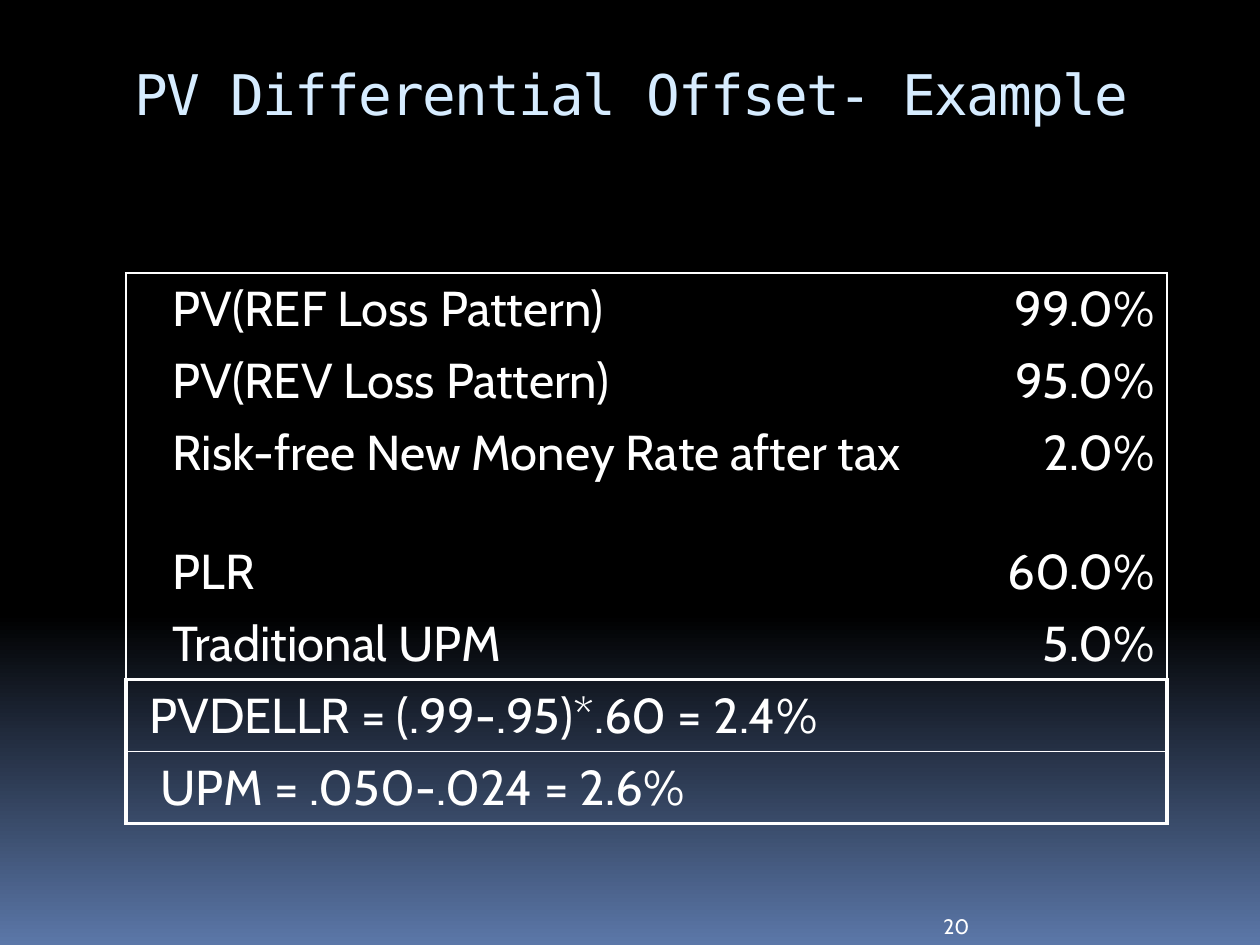
from copy import deepcopy
from dataclasses import dataclass

from lxml.etree import SubElement
from pptx import Presentation
from pptx.dml.color import RGBColor
from pptx.enum.text import MSO_ANCHOR, PP_ALIGN
from pptx.oxml.ns import qn
from pptx.util import Cm, Pt


@dataclass(frozen=True)
class Theme:
    white: str = "FFFFFF"
    title_color: str = "D6ECFF"
    gradient: tuple = ((0, "000000"), (0.65, "000000"), (1, "5B77A8"))
    title_font: str = "DejaVu Sans Mono"
    body_font: str = "Cabin"
    title_size: int = 32
    body_size: int = 28
    number_size: int = 12
    thin: float = 1
    medium: float = 1.5
    thick: float = 2.25


THEME = Theme()
HANGING = 0.97  # cm


def write(frame, text, font=THEME.body_font, size=THEME.body_size,
          color=THEME.white, align=PP_ALIGN.LEFT, tracking=None,
          hanging=None, lead=0):
    """Put one formatted paragraph in a text frame."""
    para = frame.paragraphs[0]
    para.alignment = align
    if hanging is not None:
        properties = para._p.get_or_add_pPr()
        properties.set("marL", str(Cm(hanging)))
        properties.set("indent", str(Cm(lead - hanging)))
    span = para.add_run()
    span.text = text
    span.font.name = font
    span.font.size = Pt(size)
    span.font.color.rgb = RGBColor.from_string(color)
    if tracking is not None:
        span.font._element.set("spc", str(tracking * 100))


class SlideBuilder:
    def __init__(self, deck, theme):
        self.theme = theme
        self.slide = deck.slides.add_slide(deck.slide_layouts[6])

    def background(self):
        fill = self.slide.background.fill
        fill.gradient()
        fill.gradient_angle = 270
        stops = next(self.slide.element.iter(qn("a:gsLst")))
        stops.insert(0, deepcopy(stops[0]))
        for stop, (position, color) in zip(fill.gradient_stops, self.theme.gradient):
            stop.position = position
            stop.color.rgb = RGBColor.from_string(color)

    def text(self, text, left, top, width, height, anchor=MSO_ANCHOR.TOP, **style):
        box = self.slide.shapes.add_textbox(Cm(left), Cm(top), Cm(width), Cm(height))
        box.text_frame.word_wrap = True
        box.text_frame.vertical_anchor = anchor
        write(box.text_frame, text, **style)

    def table(self, left, top, columns, rows):
        frame = self.slide.shapes.add_table(
            len(rows), len(columns), Cm(left), Cm(top),
            Cm(sum(columns)), Cm(sum(rows)))
        table = frame.table
        table.first_row = table.horz_banding = False
        for column, width in zip(table.columns, columns):
            column.width = Cm(width)
        for row, height in zip(table.rows, rows):
            row.height = Cm(height)
        return table

    def frame_cell(self, cell, **edges):
        """Draw the named edges (L, R, T, B) in points; clear the others."""
        properties = cell._tc.get_or_add_tcPr()
        for side in "LRTB":
            line = SubElement(properties, qn(f"a:ln{side}"))
            width = edges.get(side)
            if width:
                line.set("w", str(Pt(width)))
                solid = SubElement(line, qn("a:solidFill"))
                SubElement(solid, qn("a:srgbClr")).set("val", self.theme.white)
            else:
                SubElement(line, qn("a:noFill"))
        cell.fill.background()


def main():
    deck = Presentation()
    deck.slide_width, deck.slide_height = Cm(25.4), Cm(19.05)
    page = SlideBuilder(deck, THEME)
    page.background()

    # Title and slide number
    page.text("PV Differential Offset- Example", 2.46, 1.07, 21.67, 2.54,
              font=THEME.title_font, size=THEME.title_size,
              color=THEME.title_color, tracking=-1)
    page.text("20", 18.77, 17.96, 5, 1.09, anchor=MSO_ANCHOR.BOTTOM,
              size=THEME.number_size)

    # Inputs above, formulas with their lead-in (cm) below
    inputs = [
        ("PV(REF Loss Pattern)", "99.0%"),
        ("PV(REV Loss Pattern)", "95.0%"),
        ("Risk-free New Money Rate after tax", "2.0%"),
        ("PLR", "60.0%"),
        ("Traditional UPM", "5.0%"),
    ]
    formulas = [
        ("PVDELLR = (.99-.95)*.60 = 2.4%", 0.22),
        ("UPM = .050-.024 = 2.6%", 0.44),
    ]
    heights = [1.45] * (len(inputs) + len(formulas))
    heights[2] = 2.39  # gap after the rate
    table = page.table(2.54, 5.51, [0.69, 15.42, 4.88], heights)

    # Input rows: one outline around the block
    last = len(inputs) - 1
    for row, (label, value) in enumerate(inputs):
        write(table.cell(row, 1).text_frame, label, hanging=HANGING)
        write(table.cell(row, 2).text_frame, value, hanging=HANGING,
              align=PP_ALIGN.RIGHT)
        for column in range(3):
            page.frame_cell(table.cell(row, column),
                            L=THEME.medium * (column == 0),
                            R=THEME.medium * (column == 2),
                            T=THEME.medium * (row == 0),
                            B=THEME.medium * (row == last))

    # Formula rows: merged across, with a thin rule between
    rules = [THEME.medium, THEME.thin, THEME.thick]
    for index, (formula, lead) in enumerate(formulas):
        row = len(inputs) + index
        table.cell(row, 0).merge(table.cell(row, 2))
        write(table.cell(row, 0).text_frame, formula, hanging=HANGING, lead=lead)
        for column in range(3):
            page.frame_cell(table.cell(row, column),
                            L=THEME.thick * (column == 0),
                            R=THEME.thick * (column in (0, 2)),
                            T=rules[index], B=rules[index + 1])

    deck.save("out.pptx")


if __name__ == "__main__":
    main()
